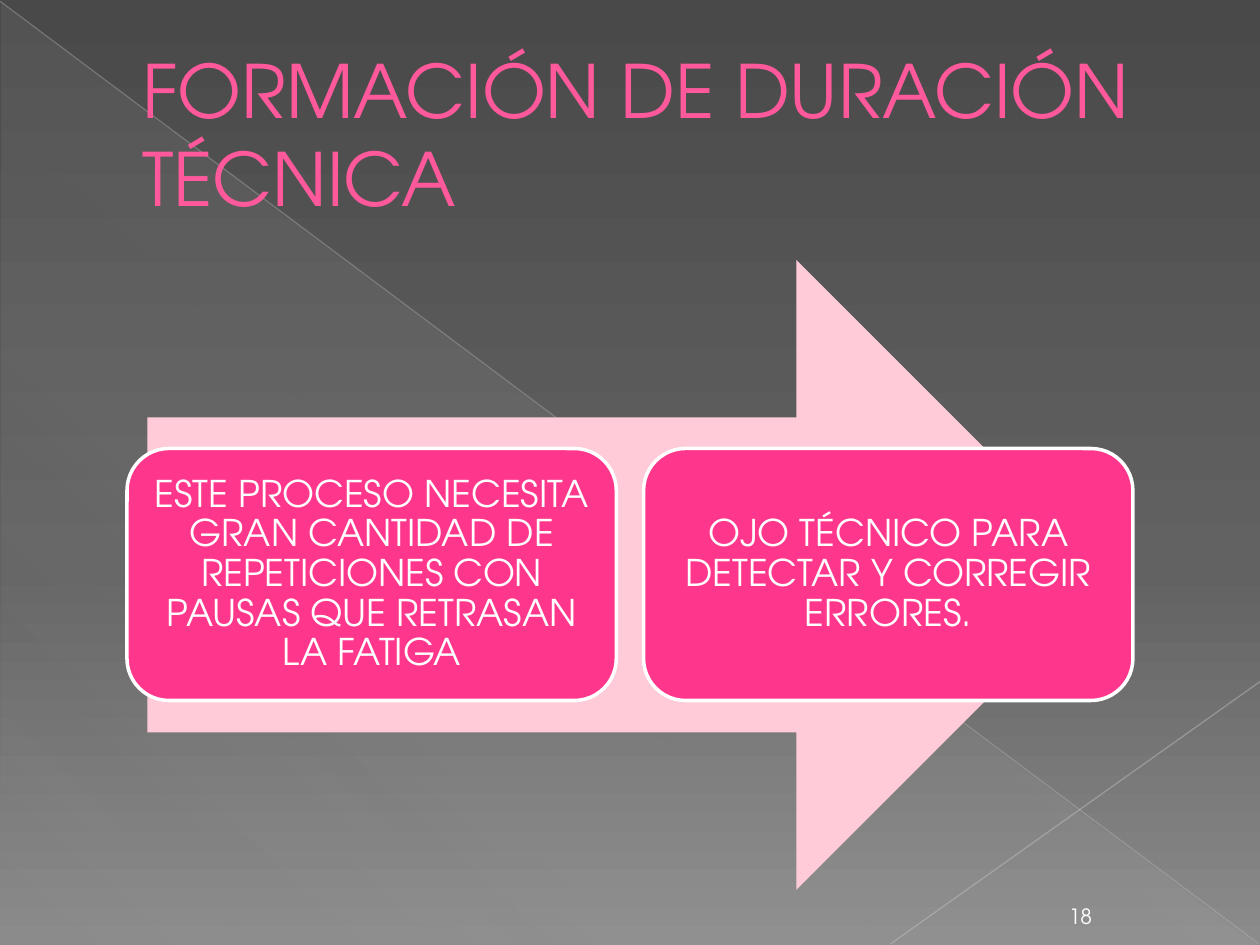
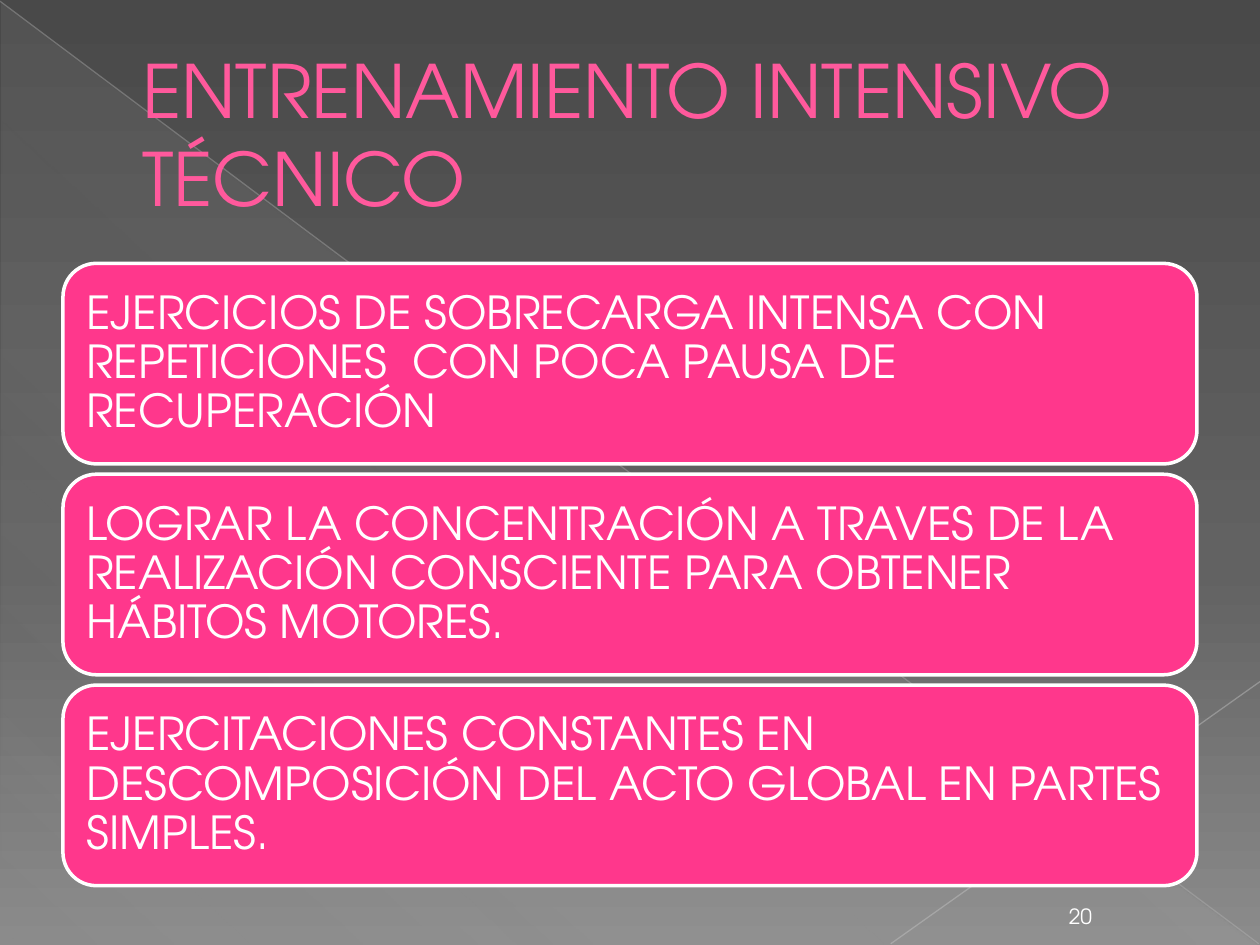
from dataclasses import dataclass
from typing import Any

from lxml import etree
from pptx import Presentation
from pptx import util as u
from pptx.dml.color import RGBColor
from pptx.enum import shapes, text
from pptx.oxml import ns

FONT = "TeX Gyre Adventor"
COLORS = {
    "top": "494949", "middle": "626262", "bottom": "8B8B8B",
    "sheen": "D2D2D2", "diagonal": "BEBEBE", "corner": "C5C5C5",
    "title": "FF599C", "card": "FF378C", "arrow": "FFCBD9", "white": "FFFFFF",
}
BACKDROP_STOPS = [(0, "top", 100), (60, "middle", 100), (100, "bottom", 100)]
SHEEN_STOPS = [(0, "sheen", 9), (70, "sheen", 7), (100, "sheen", 0)]
MIDDLE, BOTTOM = text.MSO_ANCHOR.MIDDLE, text.MSO_ANCHOR.BOTTOM
LEFT, CENTER = text.PP_ALIGN.LEFT, text.PP_ALIGN.CENTER


@dataclass(frozen=True)
class Box:
    left: float
    top: float
    width: float
    height: float

    def points(self) -> list[u.Length]:
        return [u.Pt(value) for value in (self.left, self.top, self.width, self.height)]


@dataclass(frozen=True)
class TextStyle:
    size: float
    color: str
    align: Any
    anchor: Any
    inset_x: float
    inset_y: float
    line_spacing: float = 1.0
    indent: float = 0


@dataclass(frozen=True)
class ThinLine:
    start: tuple[float, float]
    end: tuple[float, float]
    color: str
    opacity: int


@dataclass(frozen=True)
class CardRun:
    first: Box
    step_x: float
    step_y: float
    style: TextStyle
    texts: list[str]


TITLE_BOX = Box(36, 20.9, 648, 110.2)
NUMBER_BOX = Box(597.6, 510.5, 39.6, 23.8)
SHEEN_BOX = Box(0.7, 1.4, 718.6, 538.6)
ARROW_BOX = Box(84.25, 148.5, 550.8, 360)
TITLE_STYLE = TextStyle(42, "title", LEFT, MIDDLE, 7.2, 3.6, indent=38.16)
NUMBER_STYLE = TextStyle(12, "white", CENTER, BOTTOM, 7.2, 3.6)
THIN_LINES = [
    ThinLine((0, 0.7), (719.3, 539.3), "diagonal", 35),
    ThinLine((720, 389.5), (509, 539.3), "corner", 44),
]
DURATION_CARDS = CardRun(
    Box(72.6, 256.3, 279.6, 144), 295.2, 0,
    TextStyle(21, "white", CENTER, MIDDLE, 6.3, 6.3, 0.9),
    [
        "ESTE PROCESO NECESITA GRAN CANTIDAD DE REPETICIONES CON PAUSAS QUE RETRASAN LA FATIGA",
        "OJO TÉCNICO PARA DETECTAR Y CORREGIR ERRORES.",
    ],
)
INTENSIVE_CARDS = CardRun(
    Box(36, 150.5, 648, 114.6), 0, 120.5,
    TextStyle(26, "white", LEFT, MIDDLE, 7.8, 7.8, 0.9),
    [
        "EJERCICIOS DE SOBRECARGA INTENSA CON REPETICIONES  CON POCA PAUSA DE RECUPERACIÓN",
        "LOGRAR LA CONCENTRACIÓN A TRAVES DE LA REALIZACIÓN CONSCIENTE PARA OBTENER HÁBITOS MOTORES.",
        "EJERCITACIONES CONSTANTES EN DESCOMPOSICIÓN DEL ACTO GLOBAL EN PARTES SIMPLES.",
    ],
)


def set_values(target: Any, values: dict[str, Any]) -> None:
    for name, value in values.items():
        setattr(target, name, value)


def rgb(color: str) -> RGBColor:
    return RGBColor.from_string(COLORS[color])


def add_element(parent: Any, tag: str, **attributes: Any) -> Any:
    values = {name: str(value) for name, value in attributes.items()}
    return etree.SubElement(parent, ns.qn(tag), values)


def apply_gradient(owner: Any, fill: Any, stops: list[tuple[int, str, int]], angle: int) -> None:
    fill.solid()
    solid = next(owner.element.iter(ns.qn("a:solidFill")))
    gradient = etree.Element(ns.qn("a:gradFill"), rotWithShape="1")
    stop_list = add_element(gradient, "a:gsLst")
    for position, color, opacity in stops:
        stop = add_element(stop_list, "a:gs", pos=position * 1000)
        stop_color = add_element(stop, "a:srgbClr", val=COLORS[color])
        add_element(stop_color, "a:alpha", val=opacity * 1000)
    add_element(gradient, "a:lin", ang=angle * 60000, scaled=0)
    solid.getparent().replace(solid, gradient)


def write_text(shape: Any, content: str, style: TextStyle) -> None:
    frame = shape.text_frame
    set_values(frame, {
        "word_wrap": True, "vertical_anchor": style.anchor,
        "margin_left": u.Pt(style.inset_x), "margin_right": u.Pt(style.inset_x),
        "margin_top": u.Pt(style.inset_y), "margin_bottom": u.Pt(style.inset_y),
    })
    paragraph = frame.paragraphs[0]
    set_values(paragraph, {"text": content, "alignment": style.align,
                           "line_spacing": style.line_spacing})
    if style.indent:
        paragraph._p.get_or_add_pPr().set("marL", str(u.Pt(style.indent)))
    font = paragraph.runs[0].font
    set_values(font, {"name": FONT, "size": u.Pt(style.size)})
    font.color.rgb = rgb(style.color)


def add_text(slide: Any, box: Box, content: str, style: TextStyle) -> None:
    write_text(slide.shapes.add_textbox(*box.points()), content, style)


def add_plain_shape(slide: Any, kind: Any, box: Box, color: str) -> Any:
    shape = slide.shapes.add_shape(kind, *box.points())
    shape.shadow.inherit = False
    shape.fill.solid()
    shape.fill.fore_color.rgb = rgb(color)
    shape.line.fill.background()
    return shape


def add_thin_line(slide: Any, thin: ThinLine) -> None:
    ends = [u.Pt(value) for value in thin.start + thin.end]
    connector = slide.shapes.add_connector(shapes.MSO_CONNECTOR.STRAIGHT, *ends)
    connector.line.width = u.Pt(0.75)
    connector.line.color.rgb = rgb(thin.color)
    line_color = next(connector.element.iter(ns.qn("a:srgbClr")))
    add_element(line_color, "a:alpha", val=thin.opacity * 1000)
    add_element(connector.element.spPr, "a:effectLst")


def add_cards(slide: Any, run: CardRun) -> None:
    for index, content in enumerate(run.texts):
        box = Box(run.first.left + index * run.step_x, run.first.top + index * run.step_y,
                  run.first.width, run.first.height)
        card = add_plain_shape(slide, shapes.MSO_SHAPE.ROUNDED_RECTANGLE, box, "card")
        card.line.color.rgb = rgb("white")
        card.line.width = u.Pt(2)
        write_text(card, content, run.style)


def add_base_slide(presentation: Any, title: str, number: int) -> Any:
    slide = presentation.slides.add_slide(presentation.slide_layouts[6])
    apply_gradient(slide, slide.background.fill, BACKDROP_STOPS, 90)
    sheen = add_plain_shape(slide, shapes.MSO_SHAPE.RIGHT_TRIANGLE, SHEEN_BOX, "sheen")
    apply_gradient(sheen, sheen.fill, SHEEN_STOPS, 133)
    for thin in THIN_LINES:
        add_thin_line(slide, thin)
    add_text(slide, TITLE_BOX, title, TITLE_STYLE)
    add_text(slide, NUMBER_BOX, str(number), NUMBER_STYLE)
    return slide


def main() -> None:
    presentation = Presentation()
    set_values(presentation, {"slide_width": u.Pt(720), "slide_height": u.Pt(540)})

    duration = add_base_slide(presentation, "FORMACIÓN DE DURACIÓN TÉCNICA", 18)
    add_plain_shape(duration, shapes.MSO_SHAPE.RIGHT_ARROW, ARROW_BOX, "arrow")
    add_cards(duration, DURATION_CARDS)

    intensive = add_base_slide(presentation, "ENTRENAMIENTO INTENSIVO TÉCNICO", 20)
    add_cards(intensive, INTENSIVE_CARDS)

    presentation.save("out.pptx")


if __name__ == "__main__":
    main()
